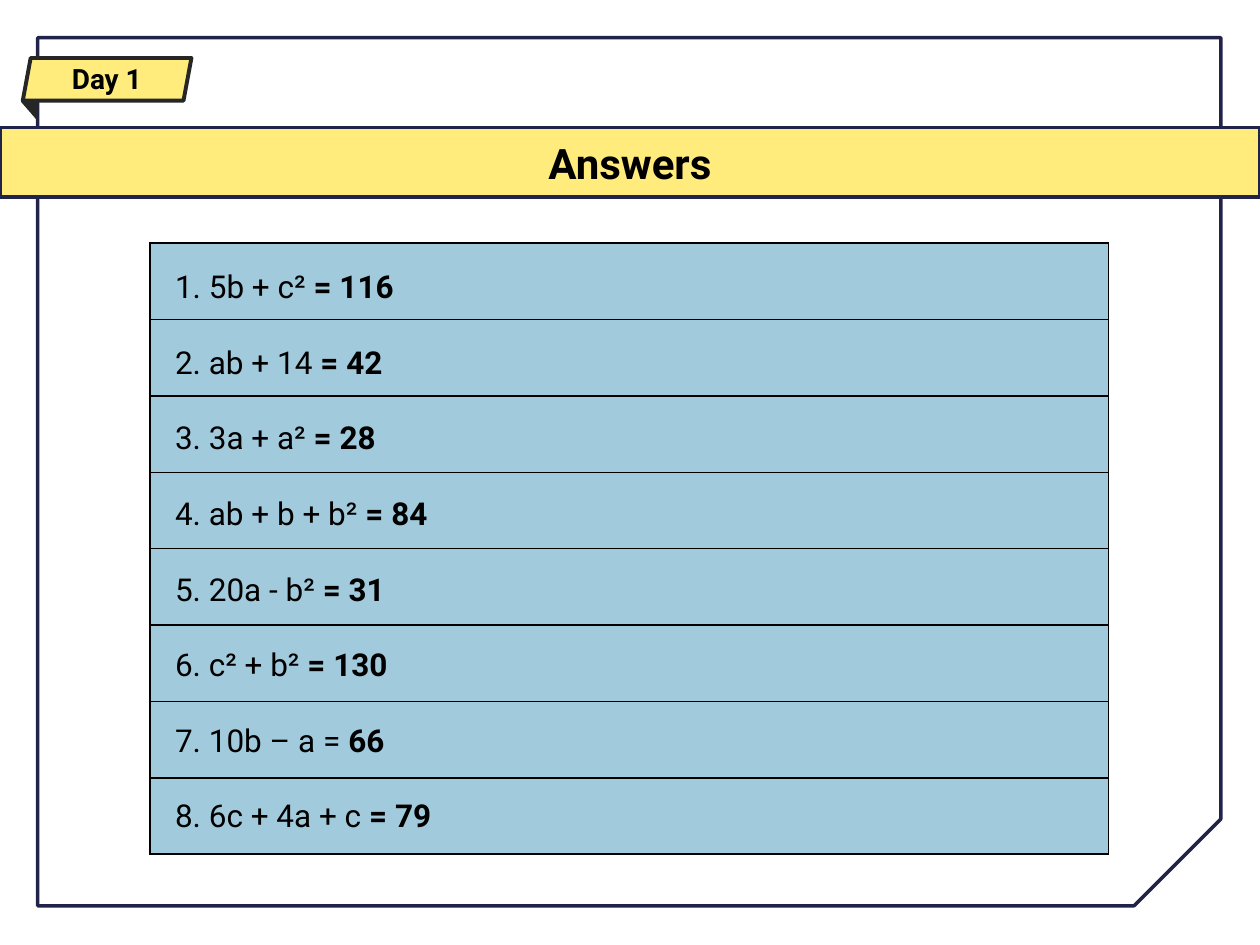
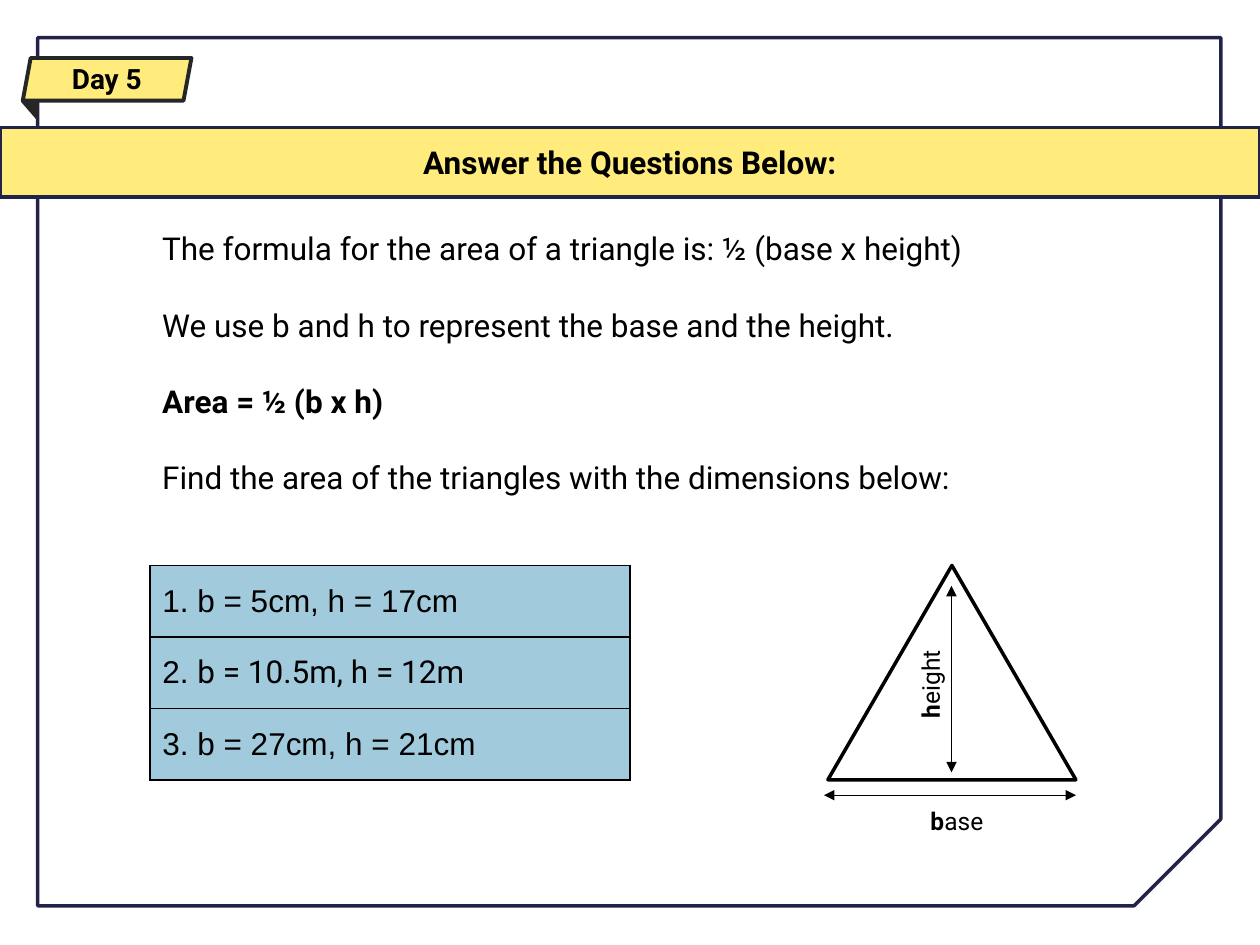
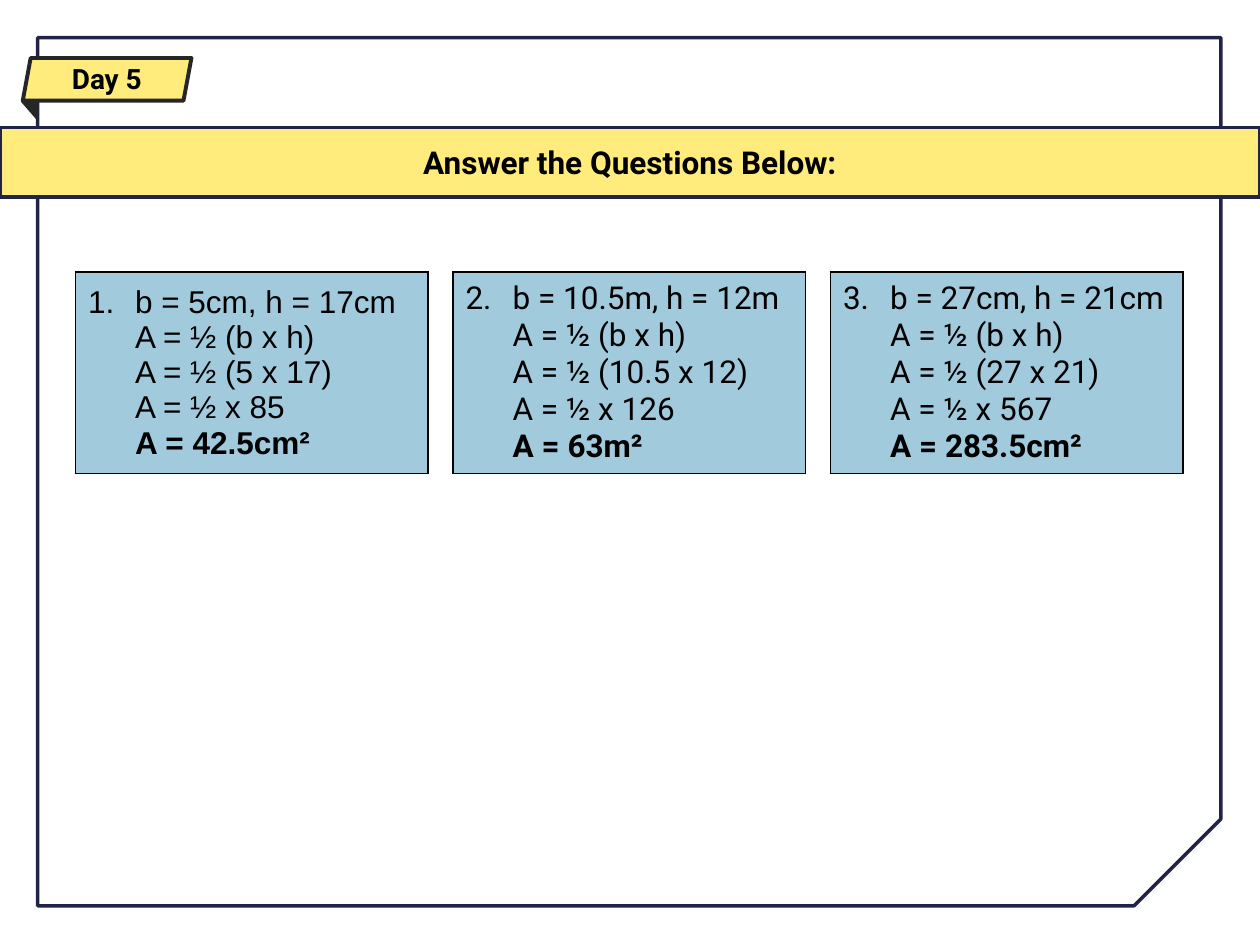
"""Build three algebra slides: day 1 answers, day 5 questions and day 5 worked answers."""
from lxml.etree import SubElement
from pptx import Presentation
from pptx.dml.color import RGBColor
from pptx.enum.shapes import MSO_CONNECTOR, MSO_SHAPE
from pptx.enum.text import MSO_ANCHOR, MSO_AUTO_SIZE, PP_ALIGN
from pptx.oxml.ns import qn
from pptx.util import Cm, Pt

HUES = {"ink": "000000", "paper": "FFFFFF", "frame": "222349", "edge": "202449",
        "band": "FFEC7C", "tag": "262626", "cell": "A1CADC"}
MAIN, ALT = "Roboto", "Arial"

ANSWERS = [
    "5b + c² *= 116*",
    "ab + 14 *= 42*",
    "3a + a² *= 28*",
    "ab + b + b² *= 84*",
    "20a - b² *= 31*",
    "c² + b² *= 130*",
    "10b – a = *66*",
    "6c + 4a + c *= 79*",
]
NOTES = [
    "The formula for the area of a triangle is: ½ (base x height)",
    "We use b and h to represent the base and the height.",
    "*Area = ½ (b x h)*",
    "Find the area of the triangles with the dimensions below:",
]
SUMS = [
    {"given": "b = 5cm, h = 17cm", "steps": ["(5 x 17)", "x 85"], "area": "42.5cm²",
     "ask": ALT, "solve": ALT},
    {"given": "b = 10.5m, h = 12m", "steps": ["(10.5 x 12)", "x 126"], "area": "63m²",
     "ask": MAIN, "solve": MAIN},
    {"given": "b = 27cm, h = 21cm", "steps": ["(27 x 21)", "x 567"], "area": "283.5cm²",
     "ask": ALT, "solve": MAIN},
]
ARROWS = [(19.18, 15.57, 19.18, 11.81), (16.61, 16.03, 21.69, 16.03)]
LABELS = [("*b*ase", 18.26, 16.13, 0), ("*h*eight", 17.73, 13.36, 270)]


def hue(name):
    return RGBColor.from_string(HUES[name])


def write(para, text, size=18, face=MAIN, align=None):
    """Fill a paragraph; parts between asterisks are bold."""
    for i, part in enumerate(text.split("*")):
        for j, line in enumerate(part.split("\n")):
            if j:
                para.add_line_break()
            if line:
                run = para.add_run()
                run.text = line
                if i % 2:
                    run.font.bold = True
    para.font.size, para.font.name = Pt(size), face
    para.font.color.rgb = hue("ink")
    if align is not None:
        para.alignment = align


def paint(shape, fill=None, line=None, width=2):
    if fill:
        shape.fill.solid()
        shape.fill.fore_color.rgb = hue(fill)
    else:
        shape.fill.background()
    if line:
        shape.line.color.rgb = hue(line)
        shape.line.width = Pt(width)
    else:
        shape.line.fill.background()


def draw(shapes, kind, box, *style):
    shape = shapes.add_shape(kind, *map(Cm, box))
    shape.shadow.inherit = False
    paint(shape, *style)
    return shape


def add_text(slide, box, lines, size=18, align=None, gap=0, pitch=None):
    shape = slide.shapes.add_textbox(*map(Cm, box))
    frame = shape.text_frame
    frame.word_wrap = True
    for i, line in enumerate(lines):
        para = frame.add_paragraph() if i else frame.paragraphs[0]
        write(para, line, size, align=align)
        if i and gap:
            para.space_before = Pt(gap)
        if pitch:
            para.line_spacing = pitch
    return shape


def add_grid(slide, left, top, width, row, count):
    """Add a one-column table and return its cells."""
    table = slide.shapes.add_table(count, 1, Cm(left), Cm(top), Cm(width), Cm(row) * count).table
    table.first_row = table.horz_banding = False
    cells = [table.cell(i, 0) for i in range(count)]
    for cell in cells:
        props = cell._tc.get_or_add_tcPr()
        for side in ("lnL", "lnR", "lnT", "lnB"):
            edge = SubElement(props, qn("a:" + side), w=str(Pt(1)))
            SubElement(SubElement(edge, qn("a:solidFill")), qn("a:srgbClr"), val=HUES["ink"])
        cell.fill.solid()
        cell.fill.fore_color.rgb = hue("cell")
        cell.vertical_anchor = MSO_ANCHOR.MIDDLE
    return cells


def add_arrow(slide, ends):
    line = slide.shapes.add_connector(MSO_CONNECTOR.STRAIGHT, *map(Cm, ends))
    line.line.color.rgb = hue("ink")
    line.line.width = Pt(0.75)
    stroke = line.line._get_or_add_ln()
    for end in ("headEnd", "tailEnd"):
        SubElement(stroke, qn("a:" + end), type="triangle")
    SubElement(line.element.spPr, qn("a:effectLst"))


def add_number(para, start):
    props = para._p.get_or_add_pPr()
    props.set("marL", str(Cm(0.95)))
    props.set("indent", str(-Cm(0.95)))
    SubElement(props, qn("a:buFont"), typeface="+mj-lt")
    SubElement(props, qn("a:buAutoNum"), type="arabicPeriod", startAt=str(start))


def add_frame(slide):
    """Put the snipped frame on the layout, behind all else."""
    frame = draw(slide.shapes, MSO_SHAPE.SNIP_ROUND_RECTANGLE, (0.76, 0.76, 23.85, 17.5),
                 "paper", "frame")
    frame.adjustments[0], frame.adjustments[1] = 0, 0.1
    frame.rotation = 180
    frame.element.spPr.find(qn("a:xfrm")).set("flipH", "1")
    slide.slide_layout.shapes.element.insert(2, frame.element)


def add_page(deck, day, head, size):
    slide = deck.slides.add_slide(deck.slide_layouts[5])
    title = slide.shapes.title
    title.left, title.top, title.width, title.height = map(Cm, (0, 2.57, 25.4, 1.4))
    paint(title, "band", "edge")
    title.text_frame.auto_size = MSO_AUTO_SIZE.NONE
    title.text_frame.vertical_anchor = MSO_ANCHOR.MIDDLE
    write(title.text_frame.paragraphs[0], f"*{head}*", size, align=PP_ALIGN.CENTER)
    tag = slide.shapes.add_group_shape().shapes
    flag = draw(tag, MSO_SHAPE.PARALLELOGRAM, (0.46, 1.17, 3.4, 0.86), "band", "tag", 2.25)
    flag.adjustments[0] = 0.186
    fold = draw(tag, MSO_SHAPE.RIGHT_TRIANGLE, (0.43, 2.06, 0.33, 0.38), "tag")
    fold.rotation = 180
    add_text(slide, (0.86, 1.12, 2.59, 0.94), [f"*Day {day}*"], 16, PP_ALIGN.CENTER)
    return slide


def add_answers(deck):
    slide = add_page(deck, 1, "Answers", 24)
    add_frame(slide)
    add_grid(slide, 3.02, 4.9, 19.33, 1.54, len(ANSWERS))
    lines = [f"{i}. {line}" for i, line in enumerate(ANSWERS, 1)]
    add_text(slide, (3.28, 4.5, 6.3, 12.57), lines, pitch=2.0)


def add_tasks(deck):
    slide = add_page(deck, 5, "Answer the Questions Below:", 18)
    add_text(slide, (3.02, 4.5, 18.64, 5.64), NOTES, gap=22)
    cells = add_grid(slide, 3.02, 11.4, 9.68, 1.44, len(SUMS))
    for i, (cell, item) in enumerate(zip(cells, SUMS), 1):
        para = cell.text_frame.paragraphs[0]
        write(para, f"{i}. *", face=ALT)
        run = para.add_run()
        run.text, run.font.name = item["given"], item["ask"]
    draw(slide.shapes, MSO_SHAPE.ISOSCELES_TRIANGLE, (16.69, 11.4, 5, 4.32), None, "ink")
    for ends in ARROWS:
        add_arrow(slide, ends)
    for text, left, top, turn in LABELS:
        label = add_text(slide, (left, top, 2.06, 0.86), [text], 14, PP_ALIGN.CENTER)
        label.rotation = turn


def add_worked(deck):
    slide = add_page(deck, 5, "Answer the Questions Below:", 18)
    for i, item in enumerate(SUMS):
        cell = add_grid(slide, 1.52 + 7.61 * i, 5.48, 7.11, 4.06, 1)[0]
        para = cell.text_frame.paragraphs[0]
        add_number(para, i + 1)
        steps = [f"A = ½ {step}" for step in ["(b x h)"] + item["steps"]]
        lines = [item["given"], *steps, f"*A = {item['area']}*"]
        write(para, "\n".join(lines), face=item["solve"])


def main():
    deck = Presentation()
    deck.slide_width, deck.slide_height = Cm(25.4), Cm(19.05)
    add_answers(deck)
    add_tasks(deck)
    add_worked(deck)
    deck.save("out.pptx")


if __name__ == "__main__":
    main()
